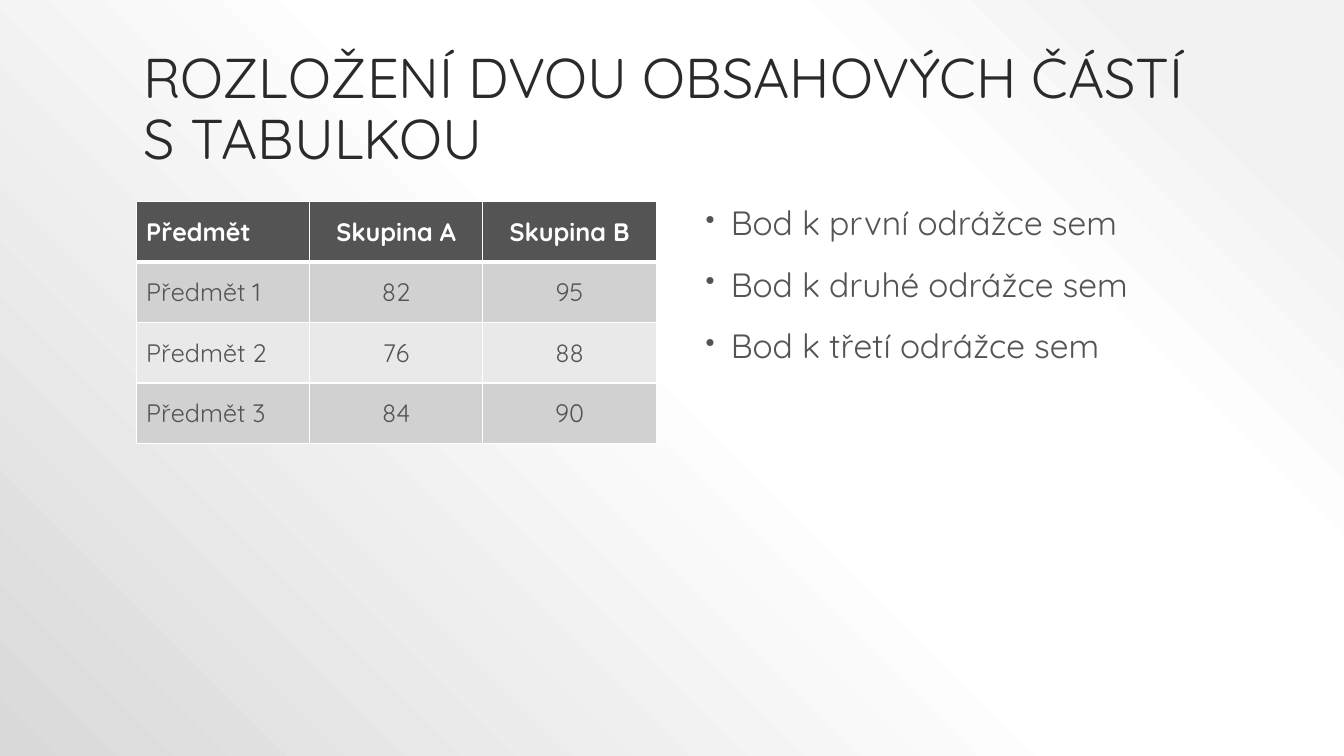
"""Build a slide with a title, a score table and a bullet list."""
from typing import Any, NamedTuple

from pptx import Presentation
from pptx.dml.color import RGBColor
from pptx.enum.text import MSO_ANCHOR, PP_ALIGN
from pptx.oxml import parse_xml
from pptx.oxml.ns import nsdecls
from pptx.util import Inches, Pt

LEFT, CENTER = PP_ALIGN.LEFT, PP_ALIGN.CENTER
TOP, MIDDLE, BOTTOM = MSO_ANCHOR.TOP, MSO_ANCHOR.MIDDLE, MSO_ANCHOR.BOTTOM
FONT = "Quicksand"
INK, GREY, WHITE = "2A2A2A", "545454", "FFFFFF"
BANDS = ("D1D1D1", "E9E9E9")
STOPS = ((10, "F2F2F2"), (28, WHITE), (48, WHITE), (100, "D9D9D9"))
SCORES = (
    ("Předmět", "Skupina A", "Skupina B"),
    ("Předmět 1", "82", "95"),
    ("Předmět 2", "76", "88"),
    ("Předmět 3", "84", "90"),
)
COLUMN_WIDTH, ROW_HEIGHT = 1.72, 0.6


class TextBlock(NamedTuple):
    left: float
    top: float
    width: float
    height: float
    lines: tuple[str, ...]
    size: int
    color: str
    anchor: MSO_ANCHOR
    bulleted: bool = False


BLOCKS = (
    TextBlock(1.33, 0.3, 10.67, 1.45,
              ("ROZLOŽENÍ DVOU OBSAHOVÝCH ČÁSTÍ S TABULKOU",), 40, INK, BOTTOM),
    TextBlock(6.85, 2, 5.15, 4.75,
              ("Bod k první odrážce sem", "Bod k druhé odrážce sem",
               "Bod k třetí odrážce sem"), 24, GREY, TOP, True),
)


def apply(target: Any, values: dict[str, Any]) -> None:
    for name, value in values.items():
        setattr(target, name, value)


def rgb(color: str) -> RGBColor:
    return RGBColor.from_string(color)


def write(para: Any, text: str, size: int, color: str, bold: bool = False) -> None:
    span = para.add_run()
    span.text = text
    apply(span.font, {"name": FONT, "size": Pt(size), "bold": bold})
    span.font.color.rgb = rgb(color)


def add_bullet(para: Any) -> None:
    properties = para._p.get_or_add_pPr()
    properties.set("marL", str(Inches(0.3)))
    properties.set("indent", str(Inches(-0.25)))
    for tag, content in (
        ("buClr", f'><a:srgbClr val="{GREY}"/></a:buClr>'),
        ("buSzPct", ' val="80000"/>'),
        ("buChar", ' char="•"/>'),
    ):
        properties.append(parse_xml(f'<a:{tag} {nsdecls("a")}{content}'))


def add_text(page: Any, block: TextBlock) -> None:
    box = page.shapes.add_textbox(*map(Inches, block[:4]))
    frame = box.text_frame
    apply(frame, {"word_wrap": True, "vertical_anchor": block.anchor})
    for index, line in enumerate(block.lines):
        para = frame.add_paragraph() if index else frame.paragraphs[0]
        if block.bulleted:
            add_bullet(para)
        apply(para, {"line_spacing": 0.9, "space_before": Pt(18 if index else 0)})
        write(para, line, block.size, block.color)


def add_borders(cell: Any, row: int) -> None:
    properties = cell._tc.get_or_add_tcPr()
    widths = {"lnL": 1, "lnR": 1, "lnT": 3 if row == 1 else 1, "lnB": 1 if row else 3}
    for index, (side, width) in enumerate(widths.items()):
        properties.insert(index, parse_xml(
            f'<a:{side} {nsdecls("a")} w="{Pt(width)}"><a:solidFill>'
            f'<a:srgbClr val="{WHITE}"/></a:solidFill></a:{side}>'))


def add_scores(page: Any) -> None:
    rows, columns = len(SCORES), len(SCORES[0])
    table = page.shapes.add_table(
        rows, columns, Inches(1.35), Inches(2),
        Inches(COLUMN_WIDTH * columns), Inches(ROW_HEIGHT * rows)).table
    apply(table, {"first_row": False, "horz_banding": False})
    for row, values in enumerate(SCORES):
        for column, value in enumerate(values):
            cell = table.cell(row, column)
            cell.vertical_anchor = MIDDLE
            cell.fill.solid()
            cell.fill.fore_color.rgb = rgb(BANDS[(row - 1) % 2] if row else GREY)
            add_borders(cell, row)
            para = cell.text_frame.paragraphs[0]
            para.alignment = CENTER if column else LEFT
            write(para, value, 18, GREY if row else WHITE, row == 0)


def add_background(page: Any) -> None:
    stops = "".join(
        f'<a:gs pos="{position * 1000}"><a:srgbClr val="{color}"/></a:gs>'
        for position, color in STOPS)
    page.element.cSld.insert(0, parse_xml(
        f'<p:bg {nsdecls("p", "a")}><p:bgPr><a:gradFill rotWithShape="1">'
        f'<a:gsLst>{stops}</a:gsLst><a:path path="circle">'
        '<a:fillToRect l="100000" b="100000"/></a:path></a:gradFill>'
        '<a:effectLst/></p:bgPr></p:bg>'))


def main() -> None:
    deck = Presentation()
    apply(deck, {"slide_width": Inches(13.33), "slide_height": Inches(7.5)})
    page = deck.slides.add_slide(deck.slide_layouts[6])
    add_background(page)
    add_scores(page)
    for block in BLOCKS:
        add_text(page, block)
    deck.save("out.pptx")


if __name__ == "__main__":
    main()
